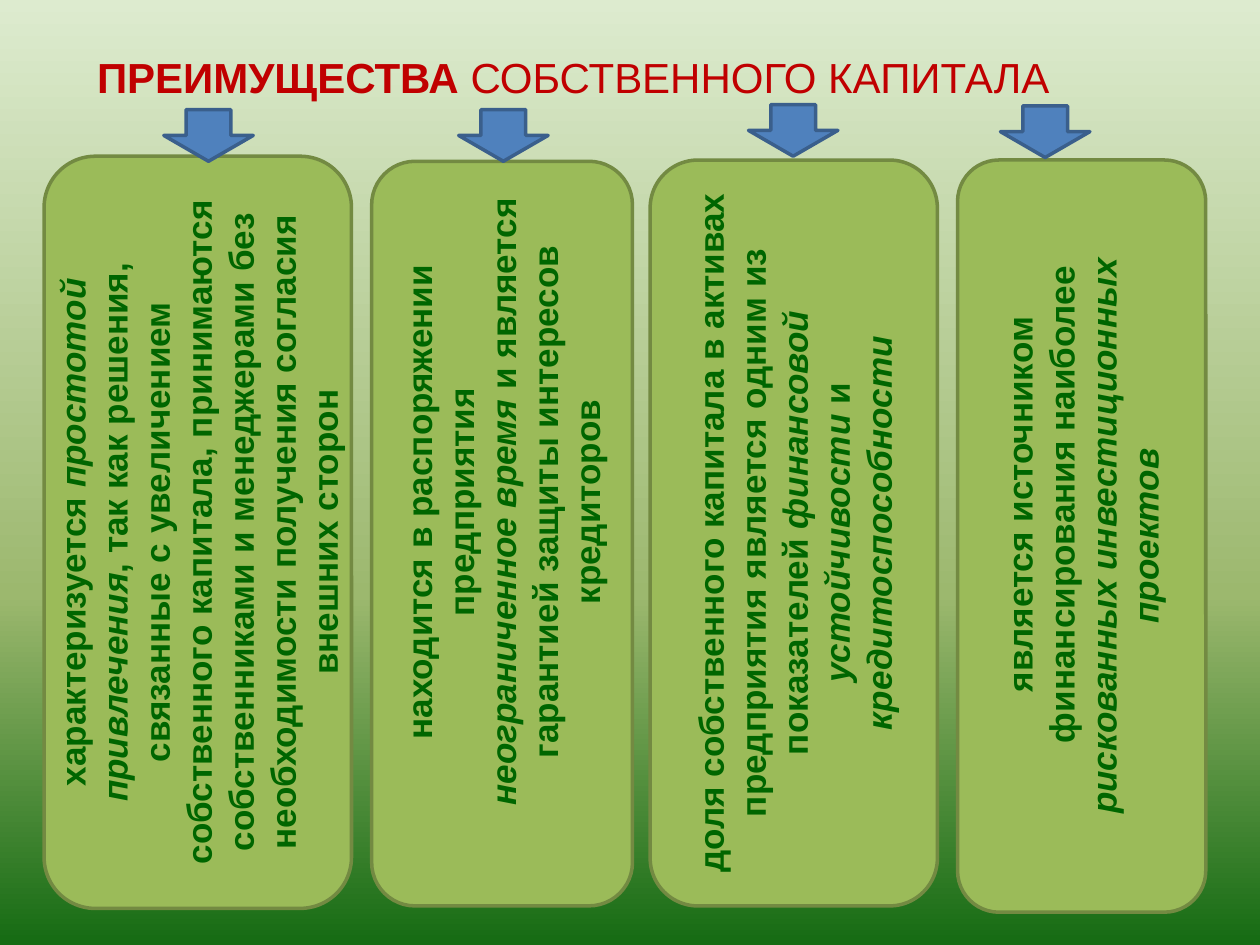
import pptx
import pptx.util
import pptx.dml.color
import pptx.enum.shapes
import pptx.enum.text
from lxml import etree
from pptx.oxml.ns import qn

RGB = pptx.dml.color.RGBColor.from_string
SHAPE = pptx.enum.shapes.MSO_SHAPE
ANCHOR = pptx.enum.text.MSO_ANCHOR
CENTER = pptx.enum.text.PP_ALIGN.CENTER
Inches, Pt = pptx.util.Inches, pptx.util.Pt

# Content: runs are (text, emphasised); paragraphs are (indent level, runs)
TITLE = [("ПРЕИМУЩЕСТВА ", True), ("СОБСТВЕННОГО КАПИТАЛА", False)]
ADVANTAGES = [
    [(0, [("характеризуется ", False),
          ("простотой привлечения", True),
          (", так как решения, связанные с увеличением собственного капитала, "
           "принимаются собственниками и менеджерами без необходимости "
           "получения согласия внешних сторон", False)])],
    [(1, [("находится в распоряжении предприятия", False)]),
     (1, [("неограниченное время ", True),
          ("и является гарантией защиты интересов кредиторов", False)])],
    [(0, [("доля собственного капитала в активах предприятия является "
           "одним из показателей ", False),
          ("финансовой устойчивости ", True),
          ("и ", False),
          ("кредитоспособности", True)])],
    [(1, [("является источником финансирования наиболее", False)]),
     (0, [("рискованных инвестиционных проектов", True)])],
]

# Layout in inches: panel (left, top, width, height), arrow (left, top)
TITLE_BOX = (0.52, 0.36, 8.06, 0.5)
PANELS = [(0.35, 1.24, 2.44, 5.97), (2.95, 1.28, 2.07, 5.91),
          (5.16, 1.27, 2.28, 5.92), (7.6, 1.27, 1.97, 5.97)]
ARROWS = [(1.3, 0.87), (3.64, 0.87), (5.94, 0.83), (7.94, 0.84)]
ARROW_SIZE = (0.71, 0.41)
INDENT = 0.5

THEME = {
    "font": "Arial", "title_size": 24, "body_size": 20, "line": 2,
    "title": "C00000", "body": "006600",
    "panel": ("9BBB59", "738A42"), "arrow": ("4F81BD", "3A5F8C"),
    "background": [(0, "DDEBCF"), (63, "9CB86E"), (100, "156B13")],
}


def paint_background(s):
    fill = s.background.fill
    fill.gradient()
    grad = fill._fill._gradFill
    stops = grad.find(qn("a:gsLst"))
    for stop in list(stops):
        stops.remove(stop)
    for pos, color in THEME["background"]:
        stop = etree.SubElement(stops, qn("a:gs"), pos=str(pos * 1000))
        etree.SubElement(stop, qn("a:srgbClr"), val=color)
    grad.find(qn("a:lin")).set("ang", str(90 * 60000))


def add_shape(s, kind, box, colors):
    sp = s.shapes.add_shape(kind, *map(Inches, box))
    sp.shadow.inherit = False
    fill, line = colors
    sp.fill.solid()
    sp.fill.fore_color.rgb = RGB(fill)
    sp.line.color.rgb = RGB(line)
    sp.line.width = Pt(THEME["line"])
    return sp


def write(p, runs, size, color, emphasis):
    p.alignment = CENTER
    p.font.name = THEME["font"]
    p.font.size = Pt(size)
    p.font.color.rgb = RGB(color)
    for text, emphasised in runs:
        r = p.add_run()
        r.text = text
        setattr(r.font, emphasis, emphasised)


def add_title(s):
    sp = s.shapes.title
    sp.left, sp.top, sp.width, sp.height = map(Inches, TITLE_BOX)
    tf = sp.text_frame
    tf.word_wrap = False
    tf.auto_size = pptx.enum.text.MSO_AUTO_SIZE.NONE
    tf.vertical_anchor = ANCHOR.TOP
    write(tf.paragraphs[0], TITLE, THEME["title_size"], THEME["title"], "bold")


def add_panel(s, box, paragraphs):
    tf = add_shape(s, SHAPE.ROUNDED_RECTANGLE, box, THEME["panel"]).text_frame
    tf.word_wrap = True
    tf.vertical_anchor = ANCHOR.MIDDLE
    tf._txBody.bodyPr.set("vert", "vert270")
    for i, (level, runs) in enumerate(paragraphs):
        p = tf.add_paragraph() if i else tf.paragraphs[0]
        p.level = level
        p._p.get_or_add_pPr().set("marL", str(Inches(INDENT * level)))
        p.font.bold = True
        write(p, runs, THEME["body_size"], THEME["body"], "italic")


def main():
    prs = pptx.Presentation()
    prs.slide_width, prs.slide_height = Inches(10), Inches(7.5)
    s = prs.slides.add_slide(prs.slide_layouts[5])
    paint_background(s)
    add_title(s)
    for box, paragraphs in zip(PANELS, ADVANTAGES):
        add_panel(s, box, paragraphs)
    # Arrows lie over the panels' top edges
    for corner in ARROWS:
        add_shape(s, SHAPE.DOWN_ARROW, corner + ARROW_SIZE, THEME["arrow"])
    prs.save("out.pptx")


if __name__ == "__main__":
    main()
